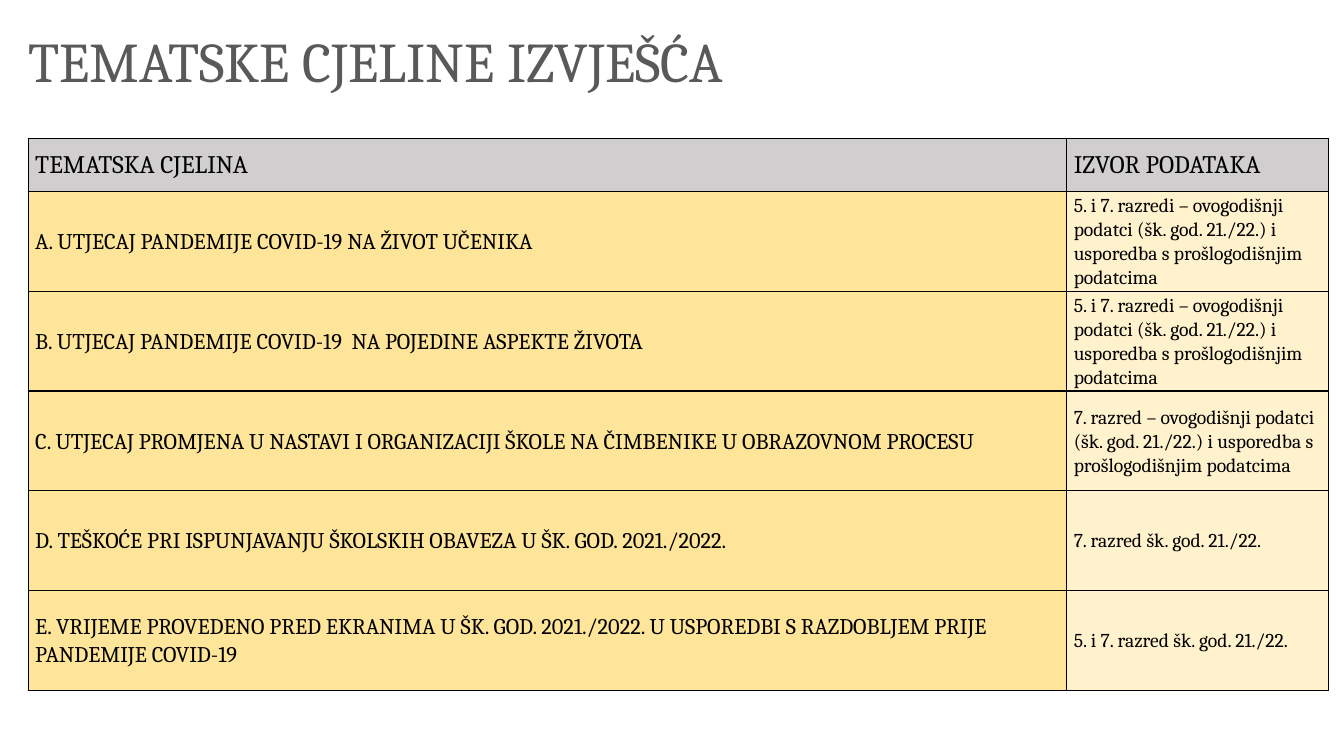
"""Build the slide listing the report's thematic units and their data sources."""
import pptx
import pptx.util
import pptx.dml.color
import pptx.enum.text
import pptx.oxml
import pptx.oxml.ns
from dataclasses import dataclass

BOTH = "5. i 7. razredi – ovogodišnji podatci (šk. god. 21./22.) i usporedba s prošlogodišnjim podatcima"

TITLE = "TEMATSKE CJELINE IZVJEŠĆA"
ROWS = [
    ("TEMATSKA CJELINA", "IZVOR PODATAKA"),
    ("A. UTJECAJ PANDEMIJE COVID-19 NA ŽIVOT UČENIKA", BOTH),
    ("B. UTJECAJ PANDEMIJE COVID-19  NA POJEDINE ASPEKTE ŽIVOTA", BOTH),
    ("C. UTJECAJ PROMJENA U NASTAVI I ORGANIZACIJI ŠKOLE NA ČIMBENIKE U OBRAZOVNOM PROCESU",
     "7. razred – ovogodišnji podatci (šk. god. 21./22.) i usporedba s prošlogodišnjim podatcima"),
    ("D. TEŠKOĆE PRI ISPUNJAVANJU ŠKOLSKIH OBAVEZA U ŠK. GOD. 2021./2022.",
     "7. razred šk. god. 21./22."),
    ("E. VRIJEME PROVEDENO PRED EKRANIMA U ŠK. GOD. 2021./2022. U USPOREDBI S RAZDOBLJEM "
     "PRIJE PANDEMIJE COVID-19", "5. i 7. razred šk. god. 21./22."),
]


@dataclass(frozen=True)
class Theme:
    """Colours, fonts and type sizes."""
    font: str = "Cambria"
    ink: str = "000000"
    title: tuple = (40, "595959")
    head: tuple = ((18, "D0CECE"), (18, "D0CECE"))
    body: tuple = ((16, "FEE599"), (14, "FFF2CC"))


THEME = Theme()
WIDE, HIGH = 13.33, 7.5
LEFT, TOP = 0.28, 1.37
COLS = (10.3, 2.6)
HEAD, BODY = 0.53, 0.99
PAD = 0.07
inch = pptx.util.Inches
shade = pptx.dml.color.RGBColor.from_string


def put(item, values):
    for name, value in values.items():
        setattr(item, name, value)


def write(frame, text, size, color, lead=None):
    para = frame.paragraphs[0]
    para.line_spacing = lead
    run = para.add_run()
    run.text = text
    put(run.font, {"name": THEME.font, "size": pptx.util.Pt(size)})
    run.font.color.rgb = shade(color)


def edge(cell):
    props = cell._tc.get_or_add_tcPr()
    for spot, side in enumerate("LRTB"):
        props.insert(spot, pptx.oxml.parse_xml(
            f'<a:ln{side} {pptx.oxml.ns.nsdecls("a")} w="12700"><a:solidFill>'
            f'<a:srgbClr val="{THEME.ink}"/></a:solidFill></a:ln{side}>'))


def grid(slide):
    highs = [HEAD] + [BODY] * (len(ROWS) - 1)
    frame = slide.shapes.add_table(len(ROWS), len(COLS), inch(LEFT), inch(TOP),
                                   inch(sum(COLS)), inch(sum(highs)))
    table = frame.table
    put(table, {"first_row": False, "horz_banding": False})
    for col, wide in zip(table.columns, COLS):
        col.width = inch(wide)
    for num, (row, high, texts) in enumerate(zip(table.rows, highs, ROWS)):
        row.height = inch(high)
        looks = THEME.body if num else THEME.head
        for cell, text, (size, fill) in zip(row.cells, texts, looks):
            put(cell, {"margin_left": inch(PAD), "margin_right": inch(PAD),
                       "margin_top": 0, "margin_bottom": 0,
                       "vertical_anchor": pptx.enum.text.MSO_ANCHOR.MIDDLE})
            cell.fill.solid()
            cell.fill.fore_color.rgb = shade(fill)
            edge(cell)
            write(cell.text_frame, text, size, THEME.ink, 1.07)


def main():
    deck = pptx.Presentation()
    put(deck, {"slide_width": inch(WIDE), "slide_height": inch(HIGH)})
    slide = deck.slides.add_slide(deck.slide_layouts[6])
    grid(slide)
    box = slide.shapes.add_textbox(inch(0.18), inch(0.21), inch(7.68), inch(0.77))
    put(box.text_frame, {"word_wrap": True,
                         "auto_size": pptx.enum.text.MSO_AUTO_SIZE.SHAPE_TO_FIT_TEXT})
    write(box.text_frame, TITLE, *THEME.title)
    deck.save("out.pptx")


if __name__ == "__main__":
    main()
